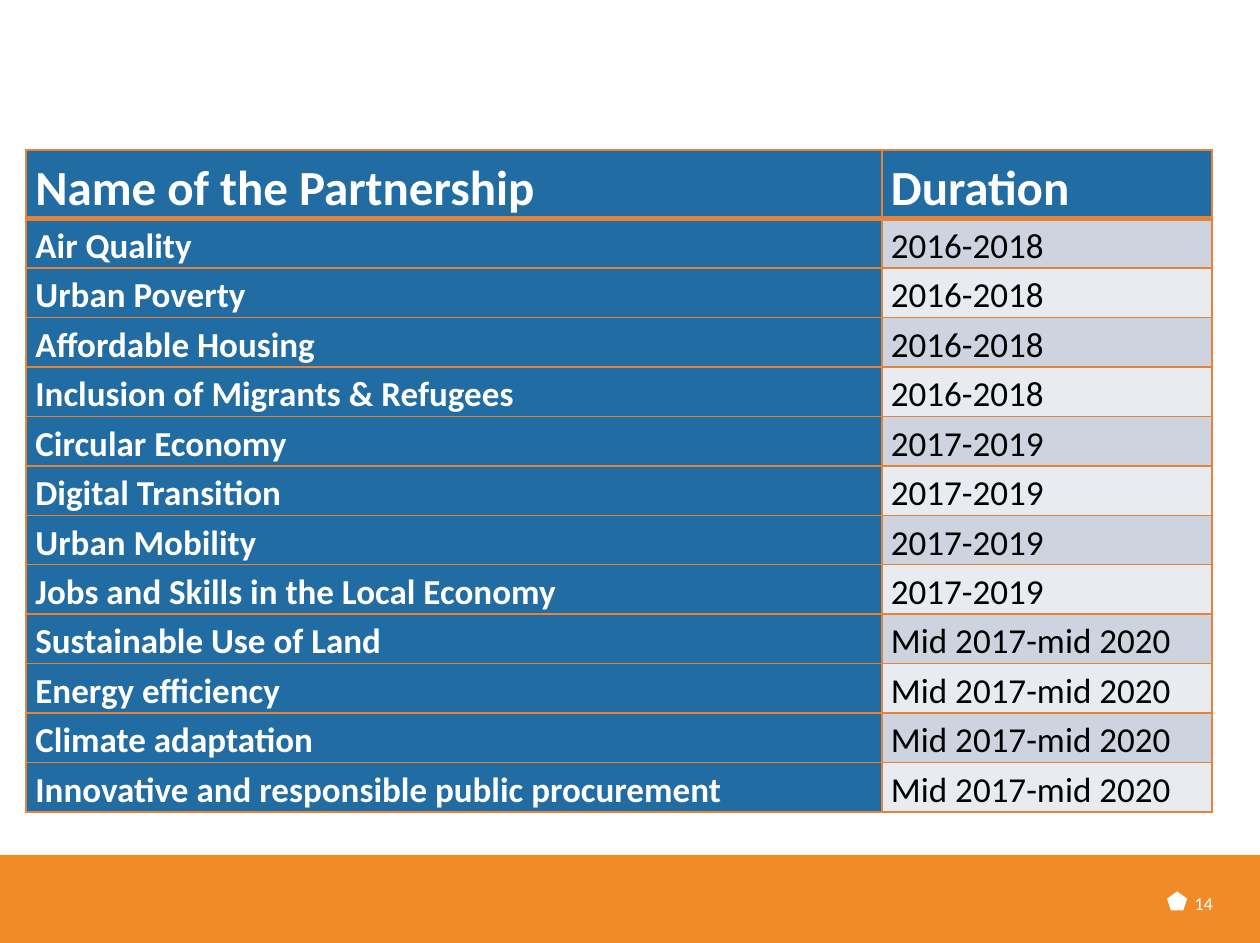
from lxml.etree import SubElement
from pptx import Presentation
from pptx.dml.color import RGBColor
from pptx.enum.shapes import MSO_SHAPE
from pptx.enum.text import MSO_ANCHOR, PP_ALIGN
from pptx.oxml.ns import qn
from pptx.util import Pt

HEADER = ("Name of the Partnership", "Duration")
PARTNERSHIPS = [
    ("Air Quality", "2016-2018"),
    ("Urban Poverty", "2016-2018"),
    ("Affordable Housing", "2016-2018"),
    ("Inclusion of Migrants & Refugees", "2016-2018"),
    ("Circular Economy", "2017-2019"),
    ("Digital Transition", "2017-2019"),
    ("Urban Mobility", "2017-2019"),
    ("Jobs and Skills in the Local Economy", "2017-2019"),
    ("Sustainable Use of Land", "Mid 2017-mid 2020"),
    ("Energy efficiency", "Mid 2017-mid 2020"),
    ("Climate adaptation", "Mid 2017-mid 2020"),
    ("Innovative and responsible public procurement", "Mid 2017-mid 2020"),
]
PAGE_NUMBER = "14"

COLORS = {
    "footer": "F08B27",
    "border": "E4843B",
    "heading": "216CA2",
    "odd": "CDD4E0",
    "even": "E8EBF0",
    "white": "FFFFFF",
    "black": "000000",
}
FONT = "Calibri"
SLIDE_WIDTH, SLIDE_HEIGHT = 720, 538.75
FOOTER_TOP, FOOTER_WIDTH = 488.4, 722.9
TABLE_LEFT, TABLE_TOP = 15, 85.7
COLUMN_WIDTHS = (488.9, 188.6)
HEADER_HEIGHT, ROW_HEIGHT = 39.3, 28.25


def rgb(name):
    return RGBColor.from_string(COLORS[name])


def add_plain_shape(slide, preset, color, *box):
    shape = slide.shapes.add_shape(preset, *map(Pt, box))
    shape.shadow.inherit = False
    shape.fill.solid()
    shape.fill.fore_color.rgb = rgb(color)
    shape.line.fill.background()


def add_run(paragraph, text, size, color, bold=False):
    run = paragraph.add_run()
    run.text = text
    run.font.name = FONT
    run.font.size = Pt(size)
    run.font.bold = bold
    run.font.color.rgb = rgb(color)


def set_borders(cell, bottom_width):
    """Draw all four cell borders; call before filling, as the XML order requires."""
    properties = cell._tc.get_or_add_tcPr()
    for side, width in (("L", 1), ("R", 1), ("T", 1), ("B", bottom_width)):
        line = SubElement(properties, qn(f"a:ln{side}"), w=str(Pt(width)))
        fill = SubElement(line, qn("a:solidFill"))
        SubElement(fill, qn("a:srgbClr"), val=COLORS["border"])


def fill_cell(cell, text, row, column):
    is_header = row == 0
    is_heading = is_header or column == 0
    band = "odd" if row % 2 else "even"
    set_borders(cell, 3 if is_header else 1)
    cell.fill.solid()
    cell.fill.fore_color.rgb = rgb("heading" if is_heading else band)
    cell.margin_left = cell.margin_right = Pt(5.25)
    cell.margin_top = cell.margin_bottom = Pt(0)
    paragraph = cell.text_frame.paragraphs[0]
    paragraph.alignment = PP_ALIGN.JUSTIFY
    paragraph.line_spacing = 1.15
    paragraph.space_after = Pt(10)
    add_run(paragraph, text, 28 if is_header else 20,
            "white" if is_heading else "black", is_heading)


def add_partnership_table(slide):
    rows = [HEADER, *PARTNERSHIPS]
    heights = [HEADER_HEIGHT] + [ROW_HEIGHT] * len(PARTNERSHIPS)
    table = slide.shapes.add_table(
        len(rows), len(HEADER), Pt(TABLE_LEFT), Pt(TABLE_TOP),
        Pt(sum(COLUMN_WIDTHS)), Pt(sum(heights))).table
    table.horz_banding = False
    for column, width in enumerate(COLUMN_WIDTHS):
        table.columns[column].width = Pt(width)
    for row, (texts, height) in enumerate(zip(rows, heights)):
        table.rows[row].height = Pt(height)
        for column, text in enumerate(texts):
            fill_cell(table.cell(row, column), text, row, column)


def add_footer(slide):
    add_plain_shape(slide, MSO_SHAPE.RECTANGLE, "footer",
                    0, FOOTER_TOP, FOOTER_WIDTH, SLIDE_HEIGHT - FOOTER_TOP)
    add_plain_shape(slide, MSO_SHAPE.REGULAR_PENTAGON, "white", 666.9, 509.3, 11.5, 10.8)
    frame = slide.shapes.add_textbox(Pt(682.5), Pt(501.4), Pt(28.8), Pt(28.8)).text_frame
    frame.word_wrap = True
    frame.vertical_anchor = MSO_ANCHOR.MIDDLE
    frame.margin_left = frame.margin_right = frame.margin_top = frame.margin_bottom = 0
    add_run(frame.paragraphs[0], PAGE_NUMBER, 10.5, "white")


def main():
    presentation = Presentation()
    presentation.slide_width = Pt(SLIDE_WIDTH)
    presentation.slide_height = Pt(SLIDE_HEIGHT)
    slide = presentation.slides.add_slide(presentation.slide_layouts[6])
    add_footer(slide)
    add_partnership_table(slide)
    presentation.save("out.pptx")


if __name__ == "__main__":
    main()
